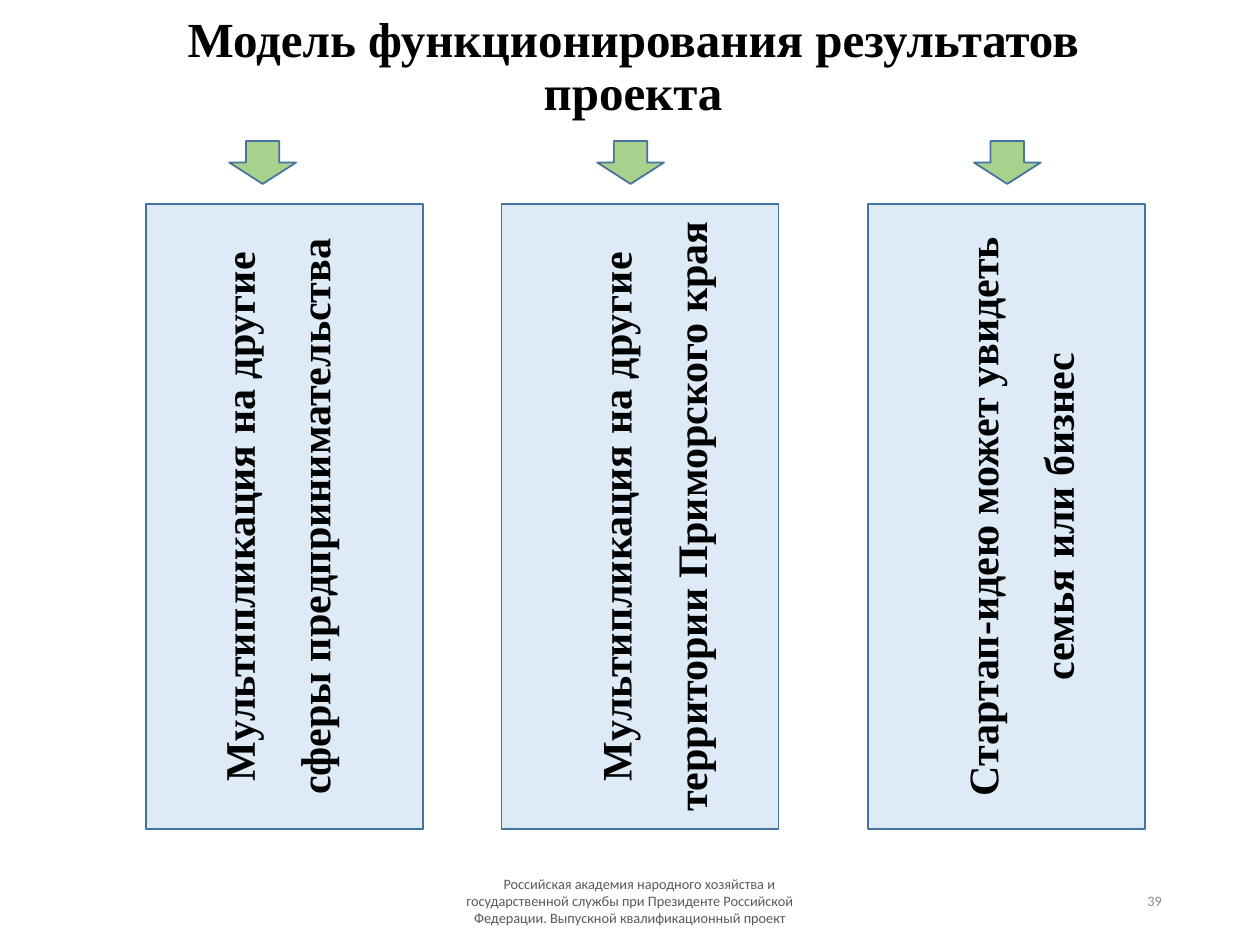
import pptx
import pptx.util
import pptx.dml.color
import pptx.enum.shapes
import pptx.enum.text

RGBColor = pptx.dml.color.RGBColor
BLACK = RGBColor(0x00, 0x00, 0x00)
FOOTER_GRAY = RGBColor(0x59, 0x59, 0x59)
NUMBER_GRAY = RGBColor(0x8C, 0x8C, 0x8C)
PALE_BLUE = RGBColor(0xDE, 0xEB, 0xF7)
GREEN = RGBColor(0xA9, 0xD1, 0x8E)
OUTLINE = RGBColor(0x43, 0x73, 0x9E)

SHAPES = pptx.enum.shapes.MSO_SHAPE
ALIGN = pptx.enum.text.PP_ALIGN

deck = pptx.Presentation()
deck.slide_width = pptx.util.Inches(10)
deck.slide_height = pptx.util.Inches(7.5)
page = deck.slides.add_slide(deck.slide_layouts[6])


def write(box, text, size=24, font="Times New Roman", color=BLACK, bold=True,
          align=ALIGN.CENTER, spacing=1.0, indent=0, left=0.1, right=0.1):
    """Put one formatted paragraph, centred vertically, into a box."""
    frame = box.text_frame
    frame.word_wrap = True
    frame.vertical_anchor = pptx.enum.text.MSO_ANCHOR.MIDDLE
    frame.margin_left = pptx.util.Inches(left)
    frame.margin_right = pptx.util.Inches(right)
    para = frame.paragraphs[0]
    para.alignment = align
    para.line_spacing = spacing
    if indent:
        para._p.get_or_add_pPr().set("indent", str(pptx.util.Inches(indent)))
    span = para.add_run()
    span.text = text
    span.font.name = font
    span.font.size = pptx.util.Pt(size)
    span.font.bold = bold
    span.font.color.rgb = color


def add_block(kind, left, top, width, height, fill):
    """Draw a filled, outlined preset shape without a shadow."""
    block = page.shapes.add_shape(
        kind, *(pptx.util.Inches(length) for length in (left, top, width, height)))
    block.shadow.inherit = False
    block.fill.solid()
    block.fill.fore_color.rgb = fill
    block.line.color.rgb = OUTLINE
    block.line.width = pptx.util.Pt(1)
    return block


# Title, footer and page number
labels = [
    ((0.96, 0.16, 8.13, 0.76), "Модель функционирования результатов проекта",
     dict(size=28, spacing=0.9)),
    ((3.31, 6.95, 3.38, 0.4),
     "Российская академия народного хозяйства и государственной службы при "
     "Президенте Российской Федерации. Выпускной квалификационный проект",
     dict(size=8.2, font="Calibri", color=FOOTER_GRAY, bold=False, indent=0.15,
          left=0.16, right=0.16)),
    ((7.07, 6.95, 2.25, 0.4), "39",
     dict(size=8.2, font="Calibri", color=NUMBER_GRAY, bold=False, align=ALIGN.RIGHT)),
]
for place, text, style in labels:
    box = page.shapes.add_textbox(*(pptx.util.Inches(length) for length in place))
    write(box, text, **style)

# Three columns: a vertical panel under a down arrow
PANEL_TOP, PANEL_WIDTH, PANEL_HEIGHT = 1.62, 2.2, 4.96
ARROW_TOP, ARROW_WIDTH, ARROW_HEIGHT = 1.12, 0.53, 0.34
columns = [
    (1.16, 1.82, "Мультипликация на другие сферы предпринимательства", 0.39),
    (3.98, 4.74, "Мультипликация на другие территории Приморского края", 0.1),
    (6.89, 7.73, "Стартап-идею может увидеть семья или бизнес", 0.1),
]
for panel_left, arrow_left, text, right in columns:
    panel = add_block(SHAPES.RECTANGLE, panel_left, PANEL_TOP,
                      PANEL_WIDTH, PANEL_HEIGHT, PALE_BLUE)
    panel.text_frame._txBody.bodyPr.set("vert", "vert270")
    write(panel, text, spacing=1.5, right=right)
    add_block(SHAPES.DOWN_ARROW, arrow_left, ARROW_TOP,
              ARROW_WIDTH, ARROW_HEIGHT, GREEN)

deck.save("out.pptx")
